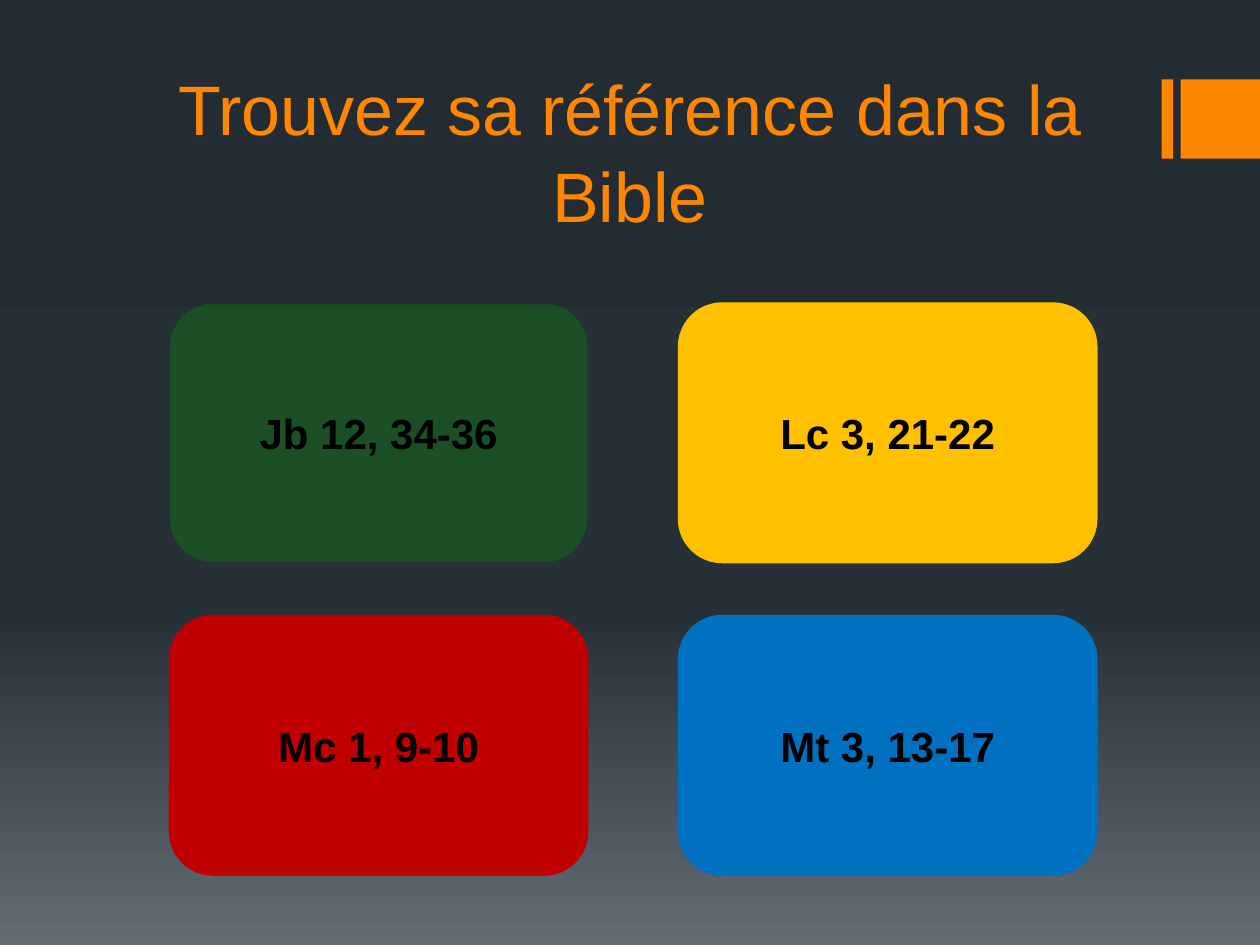
import copy
import pptx
import pptx.dml.color
import pptx.enum.shapes
import pptx.enum.text
import pptx.oxml
import pptx.oxml.ns
import pptx.util

Inches = pptx.util.Inches
Pt = pptx.util.Pt
SHAPES = pptx.enum.shapes.MSO_SHAPE


def colour(value):
    return pptx.dml.color.RGBColor.from_string(value)


def write(box, text, size, ink, bold):
    frame = box.text_frame
    frame.text = text
    frame.word_wrap = True
    frame.vertical_anchor = pptx.enum.text.MSO_ANCHOR.MIDDLE
    para = frame.paragraphs[0]
    para.alignment = pptx.enum.text.PP_ALIGN.CENTER
    span = para.runs[0]
    span.font.name = "Arial"
    span.font.size = Pt(size)
    span.font.bold = bold
    span.font.color.rgb = colour(ink)


deck = pptx.Presentation()
deck.slide_width = Inches(10)
deck.slide_height = Inches(7.5)
page = deck.slides.add_slide(deck.slide_layouts[5])

backdrop = page.background.fill
backdrop.gradient()
backdrop.gradient_angle = 270
stop_list = page.element.xpath(".//a:gsLst")[0]
stop_list.append(copy.deepcopy(stop_list[-1]))
gradient = [(0, "242C33"), (0.65, "273037"), (1, "636D76")]
for stop, (position, value) in zip(backdrop.gradient_stops, gradient):
    stop.position = position
    stop.color.rgb = colour(value)

accent_side = 0.63
for left, width in [(9.22, 0.09), (10 - accent_side, accent_side)]:
    accent = page.shapes.add_shape(
        SHAPES.RECTANGLE, Inches(left), Inches(0.63), Inches(width), Inches(accent_side))
    accent.shadow.inherit = False
    accent.fill.solid()
    accent.fill.fore_color.rgb = colour("FF8600")
    accent.line.fill.background()

title = page.shapes.title
title.left, title.top = Inches(1), Inches(0.36)
title.width, title.height = Inches(8), Inches(1.65)
write(title, "Trouvez sa référence dans la Bible", 40, "FF8600", False)
title.text_frame.paragraphs[0].line_spacing = 1.04

answers = [
    ("Jb 12, 34-36", "009900"),
    ("Lc 3, 21-22", "FFC000"),
    ("Mc 1, 9-10", "C00000"),
    ("Mt 3, 13-17", "0070C0"),
]
grid_left, grid_top = 1.35, 2.41
column_step, row_step = 4.04, 2.48
cards = []
for index, (reference, value) in enumerate(answers):
    row, column = divmod(index, 2)
    card = page.shapes.add_shape(
        SHAPES.ROUNDED_RECTANGLE,
        Inches(grid_left + column * column_step), Inches(grid_top + row * row_step),
        Inches(3.31), Inches(2.05))
    card.shadow.inherit = False
    card.fill.solid()
    card.fill.fore_color.rgb = colour(value)
    card.line.color.rgb = colour(value)
    card.line.width = Pt(1.5)
    write(card, reference, 24, "000000", True)
    cards.append(card)

green_card = cards[0]
green_card.line.fill.background()
green = green_card.element.xpath("./p:spPr/a:solidFill/a:srgbClr")[0]
alpha = pptx.oxml.parse_xml("<a:alpha %s val='30000'/>" % pptx.oxml.ns.nsdecls("a"))
green.append(alpha)
page.shapes.add_group_shape(cards)

deck.save("out.pptx")
